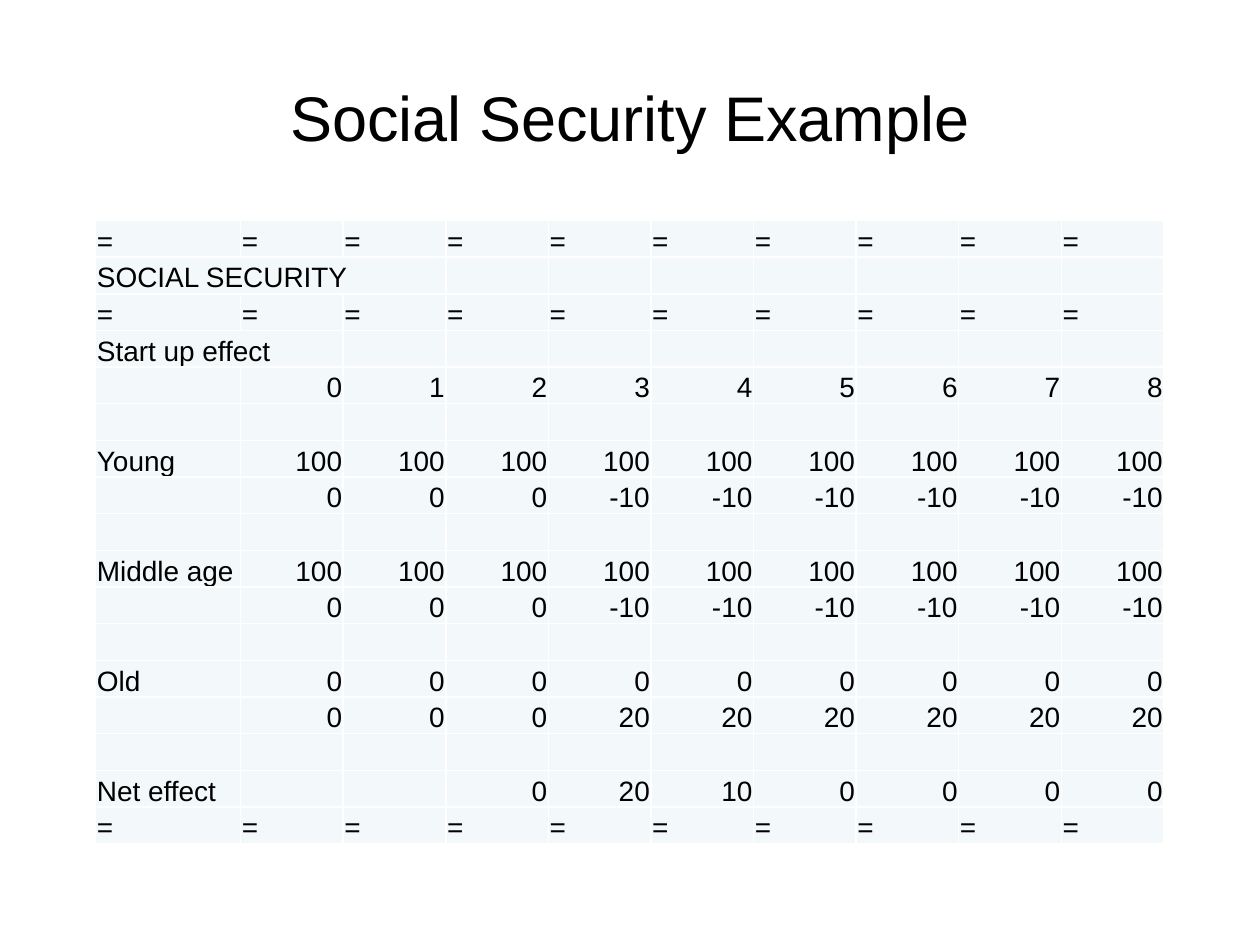
import pptx
import pptx.util
import pptx.dml.color
import pptx.enum.text
import pptx.oxml
import pptx.oxml.ns
import lxml.etree

COLORS = {"text": "000000", "cell": "F3F9FA", "border": "FFFFFF"}
FONT = "Arial"
ALIGN = pptx.enum.text.PP_ALIGN
ANCHOR = pptx.enum.text.MSO_ANCHOR
RGB = pptx.dml.color.RGBColor.from_string
qn = pptx.oxml.ns.qn


def write(p, text, size, align):
    p.alignment = align
    r = p.add_run()
    r.text = text
    for name, value in {"name": FONT, "size": pptx.util.Pt(size)}.items():
        setattr(r.font, name, value)
    r.font.color.rgb = RGB(COLORS["text"])


def add_borders(cell):
    tc_pr = cell._tc.get_or_add_tcPr()
    for side in ("lnL", "lnR", "lnT", "lnB"):
        ln = lxml.etree.SubElement(tc_pr, qn(f"a:{side}"), w=str(pptx.util.Pt(1)))
        fill = lxml.etree.SubElement(ln, qn("a:solidFill"))
        lxml.etree.SubElement(fill, qn("a:srgbClr"), val=COLORS["border"])


prs = pptx.Presentation()
prs.slide_width = pptx.util.Inches(10)
prs.slide_height = pptx.util.Inches(7.5)
W, H = prs.slide_width, prs.slide_height
s = prs.slides.add_slide(prs.slide_layouts[6])

title = s.shapes.add_textbox(int(W * 0.05), int(H * 0.04), int(W * 0.9), int(H / 6))
tf = title.text_frame
for name, value in {"word_wrap": True, "vertical_anchor": ANCHOR.MIDDLE}.items():
    setattr(tf, name, value)
write(tf.paragraphs[0], "Social Security Example", 36, ALIGN.CENTER)

rule = ["="] * 10
blank = [""] * 10
income = ["100"] * 9
tax = [""] + ["0"] * 3 + ["-10"] * 6
rows = [
    rule,
    ["SOCIAL SECURITY"] + [""] * 9,
    rule,
    ["Start up effect"] + [""] * 9,
    [""] + [str(period) for period in range(9)],
    blank,
    ["Young"] + income,
    tax,
    blank,
    ["Middle age"] + income,
    tax,
    blank,
    ["Old"] + ["0"] * 9,
    [""] + ["0"] * 3 + ["20"] * 6,
    blank,
    ["Net effect", "", "", "0", "20", "10"] + ["0"] * 4,
    rule,
]

table_w, table_h = W * 0.848, H * 0.66
label_w = W * 0.115
value_w = (table_w - label_w) / 9
frame = s.shapes.add_table(len(rows), 10, int(W * 0.076), int(H * 0.2333), int(table_w), int(table_h))
table = frame.table
for name in ("first_row", "horz_banding"):
    setattr(table, name, False)
for i, column in enumerate(table.columns):
    column.width = int(value_w if i else label_w)
for row in table.rows:
    row.height = int(table_h / len(rows))

edge = pptx.util.Inches(0.01)
cell_format = {
    "margin_left": edge,
    "margin_right": edge,
    "margin_top": edge,
    "margin_bottom": 0,
    "vertical_anchor": ANCHOR.BOTTOM,
}
for i, values in enumerate(rows):
    for j, text in enumerate(values):
        cell = table.cell(i, j)
        for name, value in cell_format.items():
            setattr(cell, name, value)
        add_borders(cell)
        cell.fill.solid()
        cell.fill.fore_color.rgb = RGB(COLORS["cell"])
        p = cell.text_frame.paragraphs[0]
        if text:
            write(p, text, 16, ALIGN.LEFT if j == 0 or text == "=" else ALIGN.RIGHT)
        else:
            lxml.etree.SubElement(p._p, qn("a:endParaRPr"), sz="1600")

for i, last in ((1, 2), (3, 1)):
    table.cell(i, 0).merge(table.cell(i, last))

prs.save("out.pptx")
